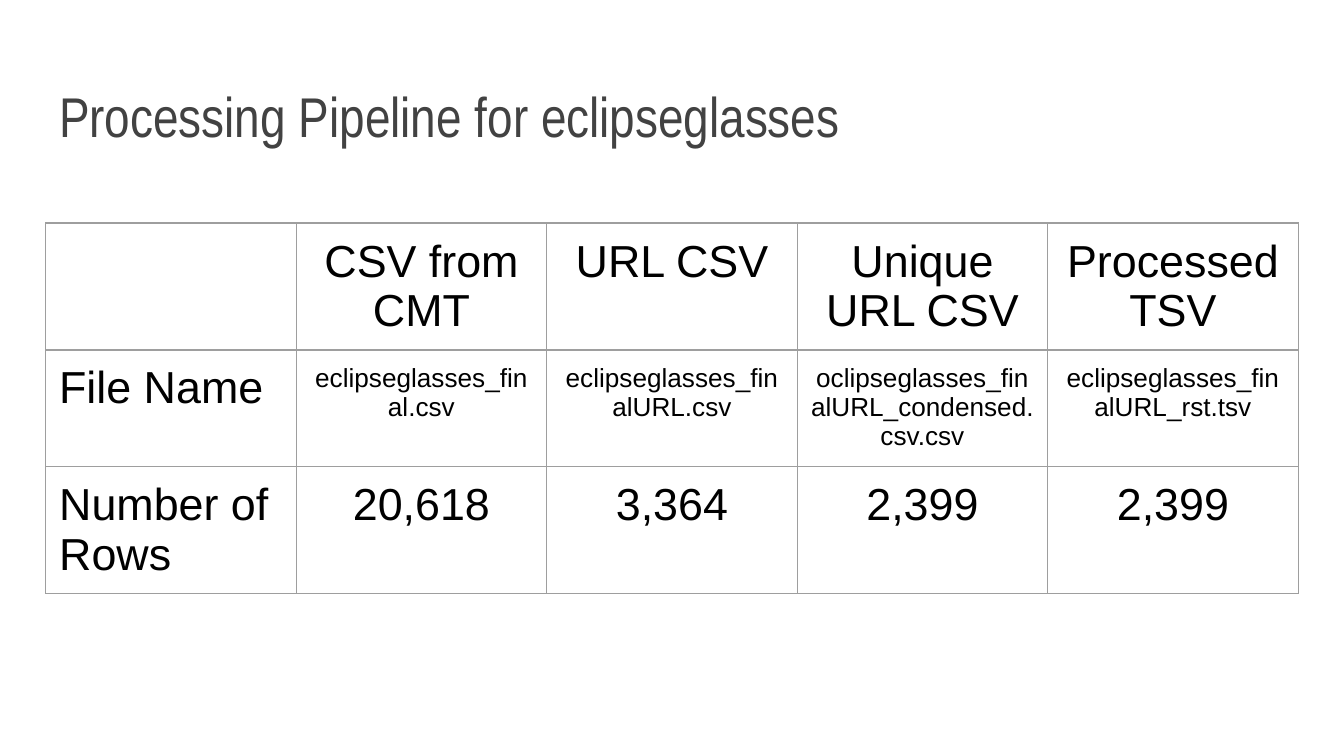
from pptx import Presentation
from pptx.dml.color import RGBColor as RGB
from pptx.enum.text import MSO_ANCHOR as Anchor, MSO_AUTO_SIZE as Fit, PP_ALIGN as Align
from pptx.oxml import parse_xml
from pptx.oxml.ns import nsdecls
from pptx.util import Inches, Pt

THEME = {
    "head": ("Arial Narrow", 30, "424242"),
    "cell": ("Arial", 24, "000000"),
    "file": ("Arial", 14, "000000"),
    "rule": "9E9E9E",
}
PAD = Inches(0.1)
ROWS = [
    ["", "CSV from CMT", "URL CSV", "Unique URL CSV", "Processed TSV"],
    ["File Name", "eclipseglasses_final.csv", "eclipseglasses_finalURL.csv",
     "oclipseglasses_finalURL_condensed.csv.csv", "eclipseglasses_finalURL_rst.tsv"],
    ["Number of Rows", "20,618", "3,364", "2,399", "2,399"],
]
HEIGHTS = [0.94, 0.87, 0.94]


def style(para, role, align):
    name, size, tint = THEME[role]
    para.alignment = align
    para.font.name, para.font.size = name, Pt(size)
    para.font.color.rgb = RGB.from_string(tint)


def rule(cell):
    """Draw a thin line on all four sides of the cell."""
    props = cell._tc.get_or_add_tcPr()
    for at, side in enumerate(("lnL", "lnR", "lnT", "lnB")):
        props.insert(at, parse_xml(
            f'<a:{side} {nsdecls("a")} w="{Pt(0.75)}"><a:solidFill>'
            f'<a:srgbClr val="{THEME["rule"]}"/></a:solidFill></a:{side}>'))


deck = Presentation()
deck.slide_width = Inches(10)
deck.slide_height = deck.slide_width * 9 // 16
edge = Inches(0.34)
width = deck.slide_width - 2 * edge
slide = deck.slides.add_slide(deck.slide_layouts[5])

title = slide.shapes.title
title.left, title.top = edge, Inches(0.41)
title.width, title.height = width, Inches(0.8)
frame = title.text_frame
frame.text = "Processing Pipeline for eclipseglasses"
frame.auto_size = Fit.NONE
frame.vertical_anchor = Anchor.BOTTOM
frame.margin_left = frame.margin_right = frame.margin_top = frame.margin_bottom = PAD
style(frame.paragraphs[0], "head", Align.LEFT)

table = slide.shapes.add_table(len(ROWS), len(ROWS[0]), edge, Inches(1.66),
                               width, Inches(sum(HEIGHTS))).table
table.first_row = table.horz_banding = False
for r, texts in enumerate(ROWS):
    table.rows[r].height = Inches(HEIGHTS[r])
    for c, text in enumerate(texts):
        cell = table.cell(r, c)
        cell.text = text
        cell.fill.background()
        cell.margin_left = cell.margin_right = cell.margin_top = cell.margin_bottom = PAD
        style(cell.text_frame.paragraphs[0], "file" if r == 1 and c else "cell",
              Align.CENTER if c else Align.LEFT)
        rule(cell)

deck.save("out.pptx")
